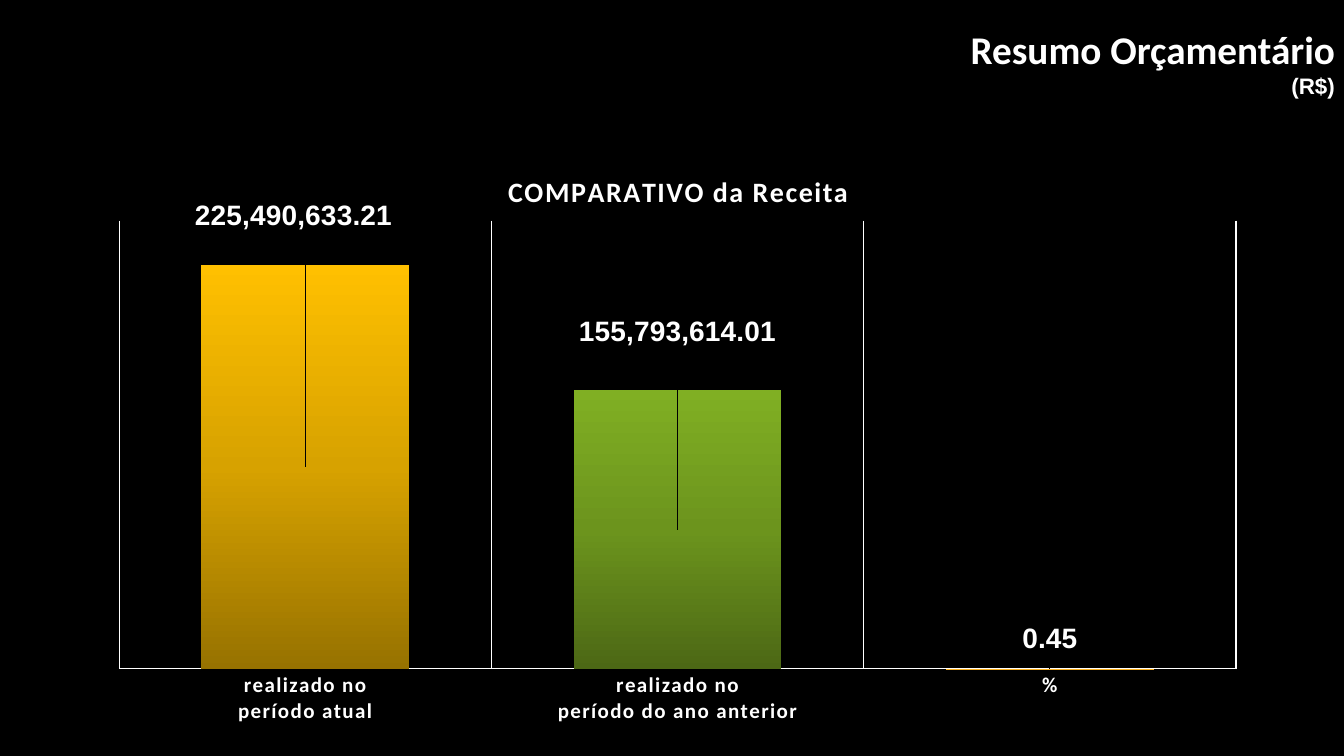
"""Build the budget summary slide with its revenue comparison chart."""
import pptx
import pptx.chart.data
import pptx.dml.color
import pptx.enum.chart
import pptx.enum.text
import pptx.oxml
import pptx.oxml.ns
import pptx.util

Inches = pptx.util.Inches
Pt = pptx.util.Pt


def tint(code):
    return pptx.dml.color.RGBColor.from_string(code)


def node(text):
    names = pptx.oxml.ns.nsdecls("a", "c")
    return pptx.oxml.parse_xml(f"<c:chart {names}>{text}</c:chart>")[0]


def place(item, index, modes, **spots):
    for old in item.findall(pptx.oxml.ns.qn("c:layout")):
        item.remove(old)
    parts = "".join(f'<c:{key} val="{value}"/>' for key, value in (modes | spots).items())
    item.insert(index, node(f"<c:layout><c:manualLayout>{parts}</c:manualLayout></c:layout>"))


class Deck:
    ink = "FFFFFF"
    face = "Calibri"
    fmt = "#,##0.00"
    edge = {"xMode": "edge", "yMode": "edge"}

    def __init__(self):
        self.file = pptx.Presentation()
        self.file.slide_width = Inches(13.33)
        self.file.slide_height = Inches(7.5)
        self.slide = self.file.slides.add_slide(self.file.slide_layouts[5])
        fill = self.slide.background.fill
        fill.solid()
        fill.fore_color.rgb = tint("000000")

    def style(self, font, size, face=None):
        font.size = Pt(size)
        font.bold = True
        font.name = face or self.face
        font.color.rgb = tint(self.ink)

    def title(self, box, lines):
        shape = self.slide.shapes.title
        shape.left, shape.top, shape.width, shape.height = map(Inches, box)
        frame = shape.text_frame
        frame.text = "\n".join(text for text, size, face in lines)
        frame.word_wrap = True
        frame.auto_size = pptx.enum.text.MSO_AUTO_SIZE.SHAPE_TO_FIT_TEXT
        frame.vertical_anchor = pptx.enum.text.MSO_ANCHOR.TOP
        for para, (text, size, face) in zip(frame.paragraphs, lines):
            para.alignment = pptx.enum.text.PP_ALIGN.RIGHT
            self.style(para.font, size, face)

    def chart(self, box, bars):
        data = pptx.chart.data.CategoryChartData(number_format=self.fmt)
        data.categories = [name for name, value in bars]
        data.add_series("Series 1", [value for name, value in bars])
        kind = pptx.enum.chart.XL_CHART_TYPE.COLUMN_STACKED
        chart = self.slide.shapes.add_chart(kind, *map(Inches, box), data).chart
        chart.has_legend = False
        chart.font.size = Pt(10)
        chart.font.name = self.face
        chart.font.color.rgb = tint(self.ink)
        plot = chart.plots[0]
        plot.gap_width = 79
        plot.overlap = 100
        plot.vary_by_categories = False
        area = chart._chartSpace.chart.plotArea
        place(area, 0, {"layoutTarget": "inner"} | self.edge, x=0.02, y=0.14, w=0.96, h=0.75)
        return chart

    def head(self, chart, text, x, y):
        title = chart.chart_title
        run = title.text_frame.paragraphs[0].add_run()
        run.text = text
        self.style(run.font, 20)
        run.font._element.set("spc", "100")
        place(title._element, 1, self.edge, x=x, y=y)

    def axes(self, chart, top):
        values = chart.value_axis
        values.minimum_scale, values.maximum_scale = 0, top
        values.has_major_gridlines = False
        values.visible = False
        names = chart.category_axis
        names.major_tick_mark = pptx.enum.chart.XL_TICK_MARK.NONE
        names.has_major_gridlines = True
        for line in (names.format.line, names.major_gridlines.format.line):
            line.width = Pt(0.75)
            line.color.rgb = tint(self.ink)
        font = names.tick_labels.font
        self.style(font, 15)
        font._element.set("spc", "100")

    def fade(self, point, shades):
        stops = "".join(f'<a:gs pos="{50000 * i}"><a:srgbClr val="{shade}"/></a:gs>'
                        for i, shade in enumerate(shades))
        fill = point.format.fill
        fill.gradient()
        fill.gradient_angle = 90
        old = fill.gradient_stops[0]._gs.getparent()
        old.getparent().replace(old, node(f"<a:gsLst>{stops}</a:gsLst>"))

    def label(self, point, x, y):
        label = point.data_label
        self.style(label.font, 20, "Arial")
        label.position = pptx.enum.chart.XL_LABEL_POSITION.CENTER
        item = label._get_or_add_dLbl()
        place(item, 1, {}, x=x, y=y)
        item.insert(2, node(f'<c:numFmt formatCode="{self.fmt}" sourceLinked="0"/>'))


def main():
    deck = Deck()
    deck.title((4.91, 0.2, 8.43, 0.84),
               [("Resumo Orçamentário", 28, "Calibri"), ("(R$)", 16, "Arial")])
    chart = deck.chart((0.95, 1.36, 11.54, 5.93),
                       [("realizado no\nperíodo atual", 225490633.21),
                        ("realizado no\nperíodo do ano anterior", 155793614.01),
                        ("%", 0.45)])
    deck.head(chart, "COMPARATIVO da Receita", 0.35, 0.05)
    deck.axes(chart, 250000000)
    bars = chart.plots[0].series[0]
    bars.format.fill.solid()
    bars.format.fill.fore_color.rgb = tint("FCB11C")
    deck.fade(bars.points[0], ("977200", "D7A200", "FFC000"))
    deck.fade(bars.points[1], ("4C6815", "6C941D", "80AF23"))
    for i, (x, y) in enumerate([(-0.01, -0.42), (0, -0.33), (0, -0.05)]):
        deck.label(bars.points[i], x, y)
    deck.file.save("out.pptx")


if __name__ == "__main__":
    main()
